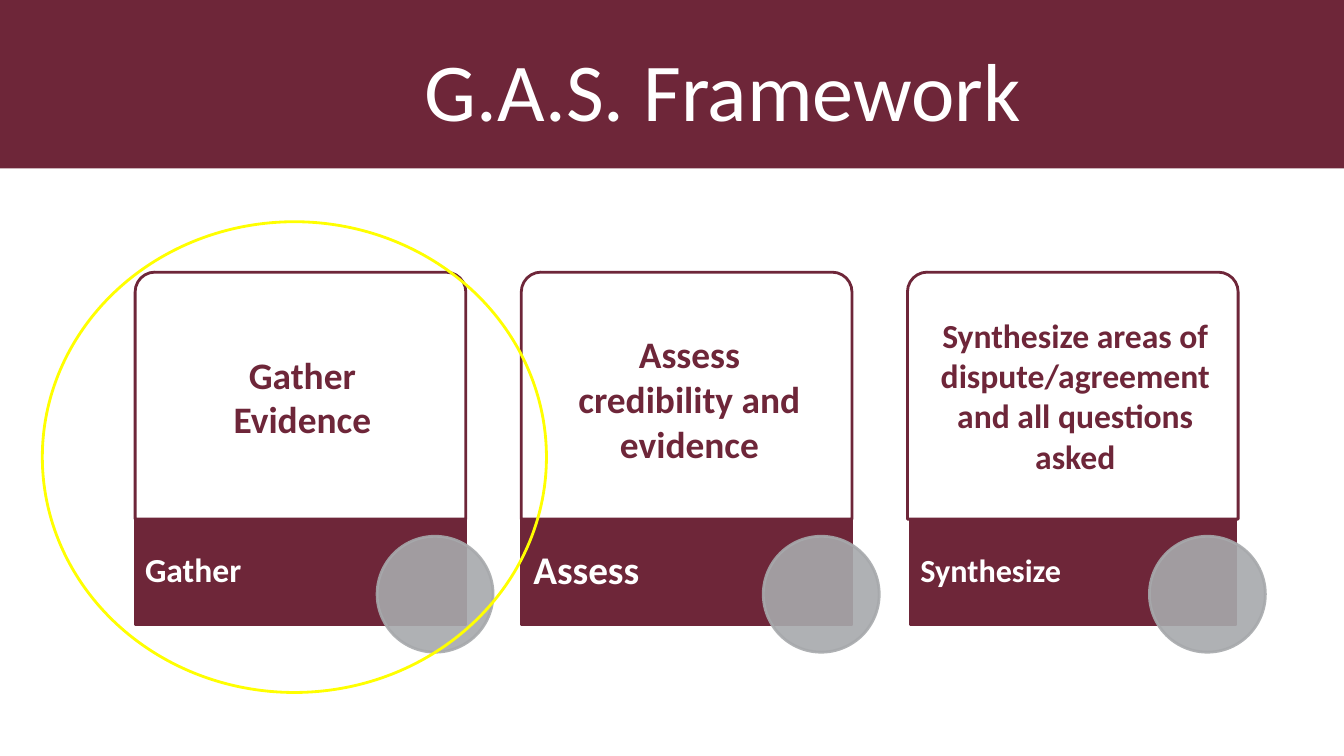
from dataclasses import dataclass
from typing import NamedTuple, Optional

from lxml import etree
from pptx import Presentation
from pptx.dml.color import RGBColor
from pptx.enum import shapes, text
from pptx.oxml import ns
from pptx.util import Inches, Pt


class Box(NamedTuple):
    left: float
    top: float
    width: float
    height: float


@dataclass(frozen=True)
class Theme:
    font: str = "Calibri"
    maroon: str = "6E2639"
    grey: str = "A7A9AC"
    white: str = "FFFFFF"
    yellow: str = "FFFF00"
    title_size: float = 58.7
    line_width: float = 2
    opacity: int = 90


@dataclass(frozen=True)
class Card:
    label: str
    label_size: float
    label_inset: float
    bar_left: float
    bar_width: float
    description: str
    description_size: float
    description_box: Box
    anchor: text.MSO_ANCHOR = text.MSO_ANCHOR.TOP


THEME = Theme()
CARD_LEFT, CARD_STEP, CARD_WIDTH = 1.34, 3.83, 3.28
CARD_TOP, PANEL_HEIGHT, BAR_HEIGHT = 2.7, 2.45, 1.05
DOT_OFFSET, DOT_TOP, DOT_SIZE = 2.4, 5.32, 1.15

CARDS = [
    Card("Gather", 24, 0.1, 1.34, 3.28, "Gather Evidence", 26.7, Box(1.78, 3.44, 2.44, 1)),
    Card("Assess", 28, 0.12, 5.17, 3.28, "Assess credibility and evidence", 26.7,
         Box(5.56, 3.24, 2.56, 1.45)),
    Card("Synthesize", 23, 0.1, 9.03, 3.23,
         "Synthesize areas of dispute/agreement and all questions asked", 24,
         Box(9.11, 3.06, 3.11, 1.72), text.MSO_ANCHOR.MIDDLE),
]


def inches(box: Box) -> list:
    return [Inches(length) for length in box]


def set_opacity(fill, percent: int) -> None:
    color = fill._xPr.find(ns.qn("a:solidFill"))[0]
    etree.SubElement(color, ns.qn("a:alpha"), val=str(percent * 1000))


def add_figure(slide, kind: shapes.MSO_SHAPE, box: Box, fill: Optional[str] = None,
               line: Optional[str] = None, fill_opacity: int = 100, line_opacity: int = 100):
    """Draw a preset shape; a missing colour means no fill or no line."""
    shape = slide.shapes.add_shape(kind, *inches(box))
    shape.shadow.inherit = False
    if line:
        shape.line.width = Pt(THEME.line_width)
    for paint, color, opacity in ((shape.fill, fill, fill_opacity),
                                  (shape.line.fill, line, line_opacity)):
        if color is None:
            paint.background()
            continue
        paint.solid()
        paint.fore_color.rgb = RGBColor.from_string(color)
        if opacity < 100:
            set_opacity(paint, opacity)
    return shape


def add_text(slide, box: Box, words: str, size: float, color: str, bold: bool = True,
             align: text.PP_ALIGN = text.PP_ALIGN.CENTER,
             anchor: text.MSO_ANCHOR = text.MSO_ANCHOR.MIDDLE, **frame_format):
    frame = slide.shapes.add_textbox(*inches(box)).text_frame
    frame_format = {"word_wrap": True, "vertical_anchor": anchor, **frame_format}
    for name, value in frame_format.items():
        setattr(frame, name, value)
    paragraph = frame.paragraphs[0]
    paragraph.alignment = align
    run = paragraph.add_run()
    run.text = words
    run.font.color.rgb = RGBColor.from_string(color)
    for name, value in {"name": THEME.font, "size": Pt(size), "bold": bold}.items():
        setattr(run.font, name, value)
    return paragraph


def add_card(slide, card: Card, left: float) -> None:
    panel = add_figure(slide, shapes.MSO_SHAPE.ROUND_2_SAME_RECTANGLE,
                       Box(left, CARD_TOP, CARD_WIDTH, PANEL_HEIGHT),
                       THEME.white, THEME.maroon, THEME.opacity)
    panel.adjustments[0] = 0.08
    bar = Box(card.bar_left, CARD_TOP + PANEL_HEIGHT, card.bar_width, BAR_HEIGHT)
    add_figure(slide, shapes.MSO_SHAPE.RECTANGLE, bar, THEME.maroon, THEME.maroon)
    label = add_text(slide, bar._replace(width=card.bar_width * 0.7), card.label,
                     card.label_size, THEME.white, align=text.PP_ALIGN.LEFT,
                     margin_left=Inches(card.label_inset), margin_right=Inches(0.03),
                     margin_top=0, margin_bottom=0)
    label.line_spacing = 0.9
    add_figure(slide, shapes.MSO_SHAPE.OVAL,
               Box(left + DOT_OFFSET, DOT_TOP, DOT_SIZE, DOT_SIZE),
               THEME.grey, THEME.grey, THEME.opacity, THEME.opacity)


def main() -> None:
    presentation = Presentation()
    presentation.slide_width = Inches(13.33)
    presentation.slide_height = Inches(7.5)
    slide = presentation.slides.add_slide(presentation.slide_layouts[6])

    add_figure(slide, shapes.MSO_SHAPE.RECTANGLE, Box(0, 0, 13.33, 1.67), THEME.maroon)
    add_text(slide, Box(1.78, 0.25, 10.78, 1.25), "G.A.S. Framework",
             THEME.title_size, THEME.white, bold=False)
    for index, card in enumerate(CARDS):
        add_card(slide, card, CARD_LEFT + index * CARD_STEP)
    for card in CARDS:
        add_text(slide, card.description_box, card.description, card.description_size,
                 THEME.maroon, anchor=card.anchor,
                 auto_size=text.MSO_AUTO_SIZE.SHAPE_TO_FIT_TEXT)
    add_figure(slide, shapes.MSO_SHAPE.OVAL, Box(0.42, 2.2, 5, 4.67), line=THEME.yellow)

    presentation.save("out.pptx")


if __name__ == "__main__":
    main()
